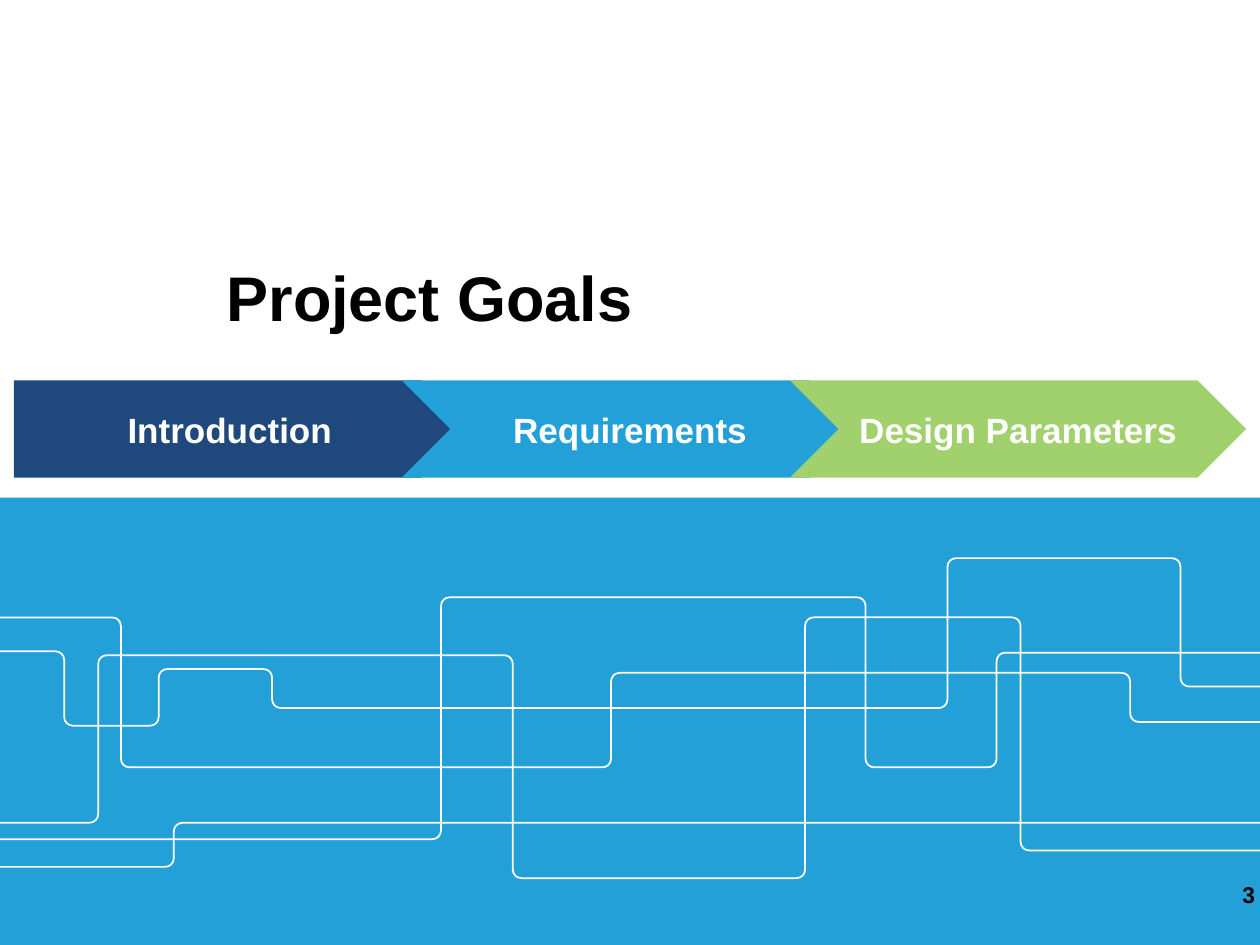
"""Build the Project Goals section slide with its three-step banner."""
from dataclasses import dataclass

from lxml import etree
from pptx import Presentation
from pptx.dml.color import RGBColor
from pptx.enum.shapes import MSO_SHAPE
from pptx.enum.text import MSO_ANCHOR, PP_ALIGN
from pptx.oxml.ns import qn
from pptx.util import Inches, Pt

RECTANGLE, PENTAGON, CHEVRON = MSO_SHAPE.RECTANGLE, MSO_SHAPE.PENTAGON, MSO_SHAPE.CHEVRON
TOP, MIDDLE = MSO_ANCHOR.TOP, MSO_ANCHOR.MIDDLE
LEFT, CENTER, RIGHT = PP_ALIGN.LEFT, PP_ALIGN.CENTER, PP_ALIGN.RIGHT


@dataclass(frozen=True)
class Theme:
    font: str = "Arial"
    ink: str = "000000"
    white: str = "FFFFFF"
    navy: str = "1F497D"
    blue: str = "24A0D8"
    green: str = "A1D16D"
    title_size: int = 36
    step_size: int = 20
    number_size: int = 13
    trace_width: int = 1


THEME = Theme()
WIDTH, HEIGHT = 10, 7.5

TITLE = "Project Goals"
PAGE_NUMBER = "3"
STEPS = [
    ("Introduction", PENTAGON, THEME.navy),
    ("Requirements", CHEVRON, THEME.blue),
    ("Design Parameters", CHEVRON, THEME.green),
]
TRACES = [
    {"levels": [5.17, 5.76, 5.31, 5.62, 4.43, 5.45], "turns": [0.51, 1.26, 2.16, 7.52, 9.37]},
    {"levels": [6.53, 5.2, 6.97, 4.9, 6.75], "turns": [0.78, 4.07, 6.39, 8.1]},
    {"levels": [4.9, 6.09, 5.34, 5.73], "turns": [0.96, 4.85, 8.97]},
    {"levels": [6.66, 4.74, 6.09, 5.18], "turns": [3.5, 6.87, 7.91]},
    {"levels": [6.88, 6.53], "turns": [1.38]},
]

BAND_TOP = 3.95
STEP_LEFT, STEP_TOP, STEP_PITCH = 0.11, 3.02, 3.08
STEP_WIDTH, STEP_HEIGHT = 3.62, 0.77
CORNER_RADIUS, CORNER_HANDLE = 0.07, 0.03


def write(shape, text, size, color, align, anchor=MIDDLE, inset=0.1, spacing=1.0):
    frame = shape.text_frame
    frame.word_wrap = True
    frame.vertical_anchor = anchor
    frame.margin_left = frame.margin_right = Inches(inset)
    frame.margin_top = frame.margin_bottom = Inches(inset)
    paragraph = frame.paragraphs[0]
    paragraph.text = text
    paragraph.alignment = align
    paragraph.line_spacing = spacing
    paragraph.font.name = THEME.font
    paragraph.font.size = Pt(size)
    paragraph.font.bold = True
    paragraph.font.color.rgb = RGBColor.from_string(color)


def add_block(slide, preset, box, color):
    block = slide.shapes.add_shape(preset, *map(Inches, box))
    block.shadow.inherit = False
    block.fill.solid()
    block.fill.fore_color.rgb = RGBColor.from_string(color)
    block.line.fill.background()
    return block


def add_text(slide, box, *args, **options):
    write(slide.shapes.add_textbox(*map(Inches, box)), *args, **options)


def toward(start, end, distance):
    length = abs(end[0] - start[0]) + abs(end[1] - start[1])
    share = Inches(distance) / length
    return tuple(round(a + (b - a) * share) for a, b in zip(start, end))


def round_corners(path):
    points = [(int(node[0].get("x")), int(node[0].get("y"))) for node in path]
    for before, corner, after, node in zip(points, points[1:], points[2:], list(path)[1:]):
        x, y = toward(corner, before, CORNER_RADIUS)
        node[0].set("x", str(x))
        node[0].set("y", str(y))
        curve = etree.Element(qn("a:cubicBezTo"))
        for end, distance in ((before, CORNER_HANDLE), (after, CORNER_HANDLE), (after, CORNER_RADIUS)):
            x, y = toward(corner, end, distance)
            etree.SubElement(curve, qn("a:pt"), x=str(x), y=str(y))
        node.addnext(curve)


def add_trace(slide, levels, turns):
    edges = [0, *turns, WIDTH]
    points = [
        (Inches(x), Inches(level))
        for level, left, right in zip(levels, edges, edges[1:])
        for x in (left, right)
    ]
    builder = slide.shapes.build_freeform(*points[0])
    builder.add_line_segments(points[1:], close=False)
    trace = builder.convert_to_shape()
    trace.shadow.inherit = False
    trace.fill.background()
    trace.line.color.rgb = RGBColor.from_string(THEME.white)
    trace.line.width = Pt(THEME.trace_width)
    round_corners(trace.element.xpath(".//a:path")[0])


def main():
    deck = Presentation()
    deck.slide_width, deck.slide_height = Inches(WIDTH), Inches(HEIGHT)
    slide = deck.slides.add_slide(deck.slide_layouts[6])

    add_block(slide, RECTANGLE, (0, BAND_TOP, WIDTH, HEIGHT - BAND_TOP), THEME.blue)
    for trace in TRACES:
        add_trace(slide, **trace)

    add_text(slide, (1.7, 1.76, 7.64, 1.14), TITLE, THEME.title_size, THEME.ink, LEFT, spacing=1.06)
    for column, (label, preset, color) in enumerate(STEPS):
        box = (STEP_LEFT + column * STEP_PITCH, STEP_TOP, STEP_WIDTH, STEP_HEIGHT)
        step = add_block(slide, preset, box, color)
        step.adjustments[0] = 0.5
        write(step, label, THEME.step_size, THEME.white, CENTER)
    add_text(slide, (9.36, 6.93, 0.6, 0.57), PAGE_NUMBER, THEME.number_size, THEME.ink, RIGHT,
             anchor=TOP, inset=0, spacing=1.29)

    deck.save("out.pptx")


if __name__ == "__main__":
    main()
